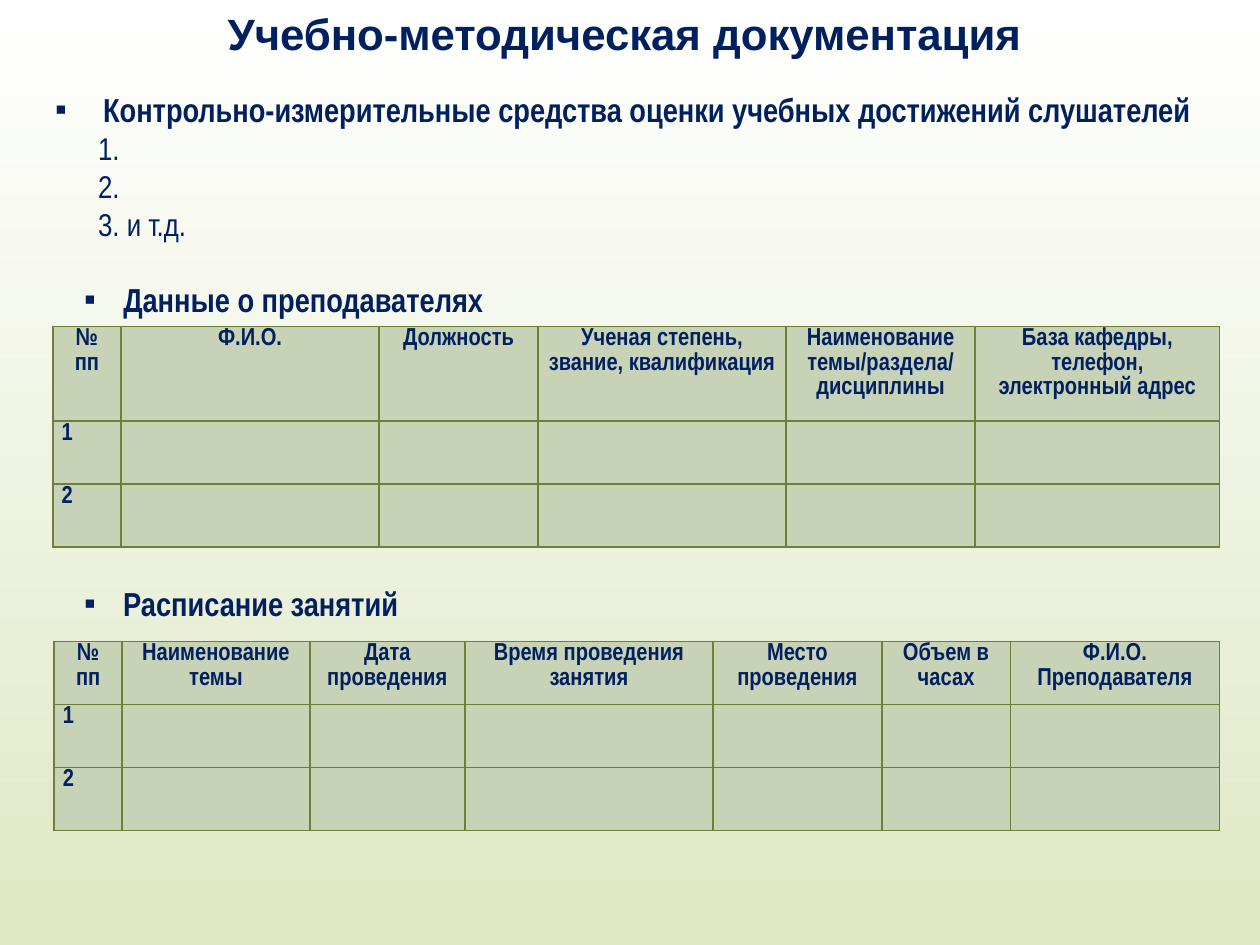
"""Build a slide of course documentation with two green form tables."""

import dataclasses
import typing

import lxml.etree
import pptx
import pptx.dml.color
import pptx.enum.text
import pptx.oxml.ns
import pptx.util

WIDTH, HEIGHT = pptx.util.Inches(10), pptx.util.Inches(7.5)
COLOURS = {
    "text": "002060",
    "cell": "C7D2B7",
    "border": "6D7F39",
    "top": "FFFFFF",
    "bottom": "DFE8C4",
}
ALIGN = pptx.enum.text.PP_ALIGN
qn = pptx.oxml.ns.qn


@dataclasses.dataclass(frozen=True)
class Area:
    """A rectangle in percent of the slide's width and height."""

    left: float
    top: float
    width: float
    height: float

    def lengths(self) -> tuple[int, int, int, int]:
        return across(self.left), down(self.top), across(self.width), down(self.height)


@dataclasses.dataclass(frozen=True)
class Section:
    """A bulleted heading with optional lines under it."""

    area: Area
    heading: str
    hanging: float
    lines: tuple[str, ...] = ()


@dataclasses.dataclass(frozen=True)
class Form:
    """A table with a header row and numbered empty rows, sized in percent."""

    left: float
    top: float
    header_height: float
    columns: tuple[tuple[str, float], ...]
    row_height: float = 6.67
    row_count: int = 2


SECTIONS = (
    Section(
        Area(3.4, 8.8, 93.4, 17.73),
        "Контрольно-измерительные средства оценки учебных достижений слушателей",
        3.8,
        ("1.", "2.", "3. и т.д."),
    ),
    Section(Area(5.7, 28.93, 34.1, 5.6), "Данные о преподавателях", 3.1),
    Section(Area(5.7, 61.07, 27.3, 5.6), "Расписание занятий", 3.1),
)
FORMS = (
    Form(4.2, 34.53, 10, (
        ("№\nпп", 5.4),
        ("Ф.И.О.", 20.5),
        ("Должность", 12.6),
        ("Ученая степень, звание, квалификация", 19.7),
        ("Наименование темы/раздела/ дисциплины", 15),
        ("База кафедры, телефон, электронный адрес", 19.4),
    )),
    Form(4.3, 67.87, 6.67, (
        ("№\nпп", 5.4),
        ("Наименование темы", 14.9),
        ("Дата проведения", 12.3),
        ("Время проведения занятия", 19.7),
        ("Место проведения", 13.4),
        ("Объем в часах", 10.2),
        ("Ф.И.О.\nПреподавателя", 16.6),
    )),
)


def across(percent: float) -> int:
    """Turn a percentage of the slide's width into a length."""
    return round(WIDTH * percent / 100)


def down(percent: float) -> int:
    """Turn a percentage of the slide's height into a length."""
    return round(HEIGHT * percent / 100)


def colour(name: str) -> pptx.dml.color.RGBColor:
    """Look up a named colour."""
    return pptx.dml.color.RGBColor.from_string(COLOURS[name])


def write(
    frame: typing.Any,
    text: str,
    *,
    size: float,
    font: str = "Arial Narrow",
    bold: bool = True,
    align: ALIGN = ALIGN.LEFT,
    spacing: typing.Any = None,
    margin: float = 0,
    bullet: str = "",
) -> None:
    """Add each line of the text as a formatted paragraph."""
    for line in text.split("\n"):
        para = frame.add_paragraph() if frame.text else frame.paragraphs[0]
        para.alignment, para.line_spacing = align, spacing
        span = para.add_run()
        span.text = line
        span.font.name, span.font.size, span.font.bold = font, pptx.util.Pt(size), bold
        span.font.color.rgb = colour("text")
        properties = para._p.get_or_add_pPr()
        properties.set("marL", str(across(margin)))
        properties.set("indent", str(-across(margin) if bullet else 0))
        if bullet:
            lxml.etree.SubElement(properties, qn("a:buFont"), typeface="Arial")
            lxml.etree.SubElement(properties, qn("a:buChar"), char=bullet)


def draw_title(page: typing.Any, text: str) -> None:
    """Place and format the title placeholder."""
    title = page.shapes.title
    title.left, title.top, title.width, title.height = Area(1.1, 0, 96.9, 4.13).lengths()
    title.text_frame.vertical_anchor = pptx.enum.text.MSO_ANCHOR.TOP
    title.text_frame.auto_size = pptx.enum.text.MSO_AUTO_SIZE.NONE
    write(title.text_frame, text, size=25, font="Arial", align=ALIGN.CENTER)


def draw_section(page: typing.Any, section: Section) -> None:
    """Draw a bulleted heading and its lines."""
    frame = page.shapes.add_textbox(*section.area.lengths()).text_frame
    frame.word_wrap = True
    write(frame, section.heading, size=19, margin=section.hanging, bullet="▪")
    for line in section.lines:
        write(frame, line, size=18, bold=False, margin=3.4)


def format_cell(cell: typing.Any) -> None:
    """Give a table cell its fill, margins and borders."""
    cell.margin_left = cell.margin_right = across(0.7)
    cell.margin_top = cell.margin_bottom = 0
    cell.fill.solid()
    cell.fill.fore_color.rgb = colour("cell")
    properties = cell._tc.get_or_add_tcPr()
    for index, side in enumerate(("lnL", "lnR", "lnT", "lnB")):
        line = lxml.etree.Element(qn(f"a:{side}"), w=str(pptx.util.Pt(1)))
        fill = lxml.etree.SubElement(line, qn("a:solidFill"))
        lxml.etree.SubElement(fill, qn("a:srgbClr"), val=COLOURS["border"])
        properties.insert(index, line)


def draw_form(page: typing.Any, form: Form) -> None:
    """Draw a table with its headings and row numbers."""
    heights = (form.header_height,) + (form.row_height,) * form.row_count
    area = Area(form.left, form.top, sum(width for _, width in form.columns), sum(heights))
    table = page.shapes.add_table(len(heights), len(form.columns), *area.lengths()).table
    table.first_row = table.horz_banding = False
    for row, height in zip(table.rows, heights):
        row.height = down(height)
    for cell in table.iter_cells():
        format_cell(cell)
    style = {"size": 14, "spacing": pptx.util.Pt(14)}
    for index, (heading, width) in enumerate(form.columns):
        table.columns[index].width = across(width)
        write(table.cell(0, index).text_frame, heading, align=ALIGN.CENTER, **style)
    for number in range(1, form.row_count + 1):
        write(table.cell(number, 0).text_frame, str(number), **style)


def main() -> None:
    """Build and save the deck."""
    deck = pptx.Presentation()
    deck.slide_width, deck.slide_height = WIDTH, HEIGHT
    page = deck.slides.add_slide(deck.slide_layouts.get_by_name("Title Only"))
    backdrop = page.background.fill
    backdrop.gradient()
    backdrop.gradient_angle = 270
    for stop, name in zip(backdrop.gradient_stops, ("top", "bottom")):
        stop.color.rgb = colour(name)
    draw_title(page, "Учебно-методическая документация")
    for section in SECTIONS:
        draw_section(page, section)
    for form in FORMS:
        draw_form(page, form)
    deck.save("out.pptx")


if __name__ == "__main__":
    main()
